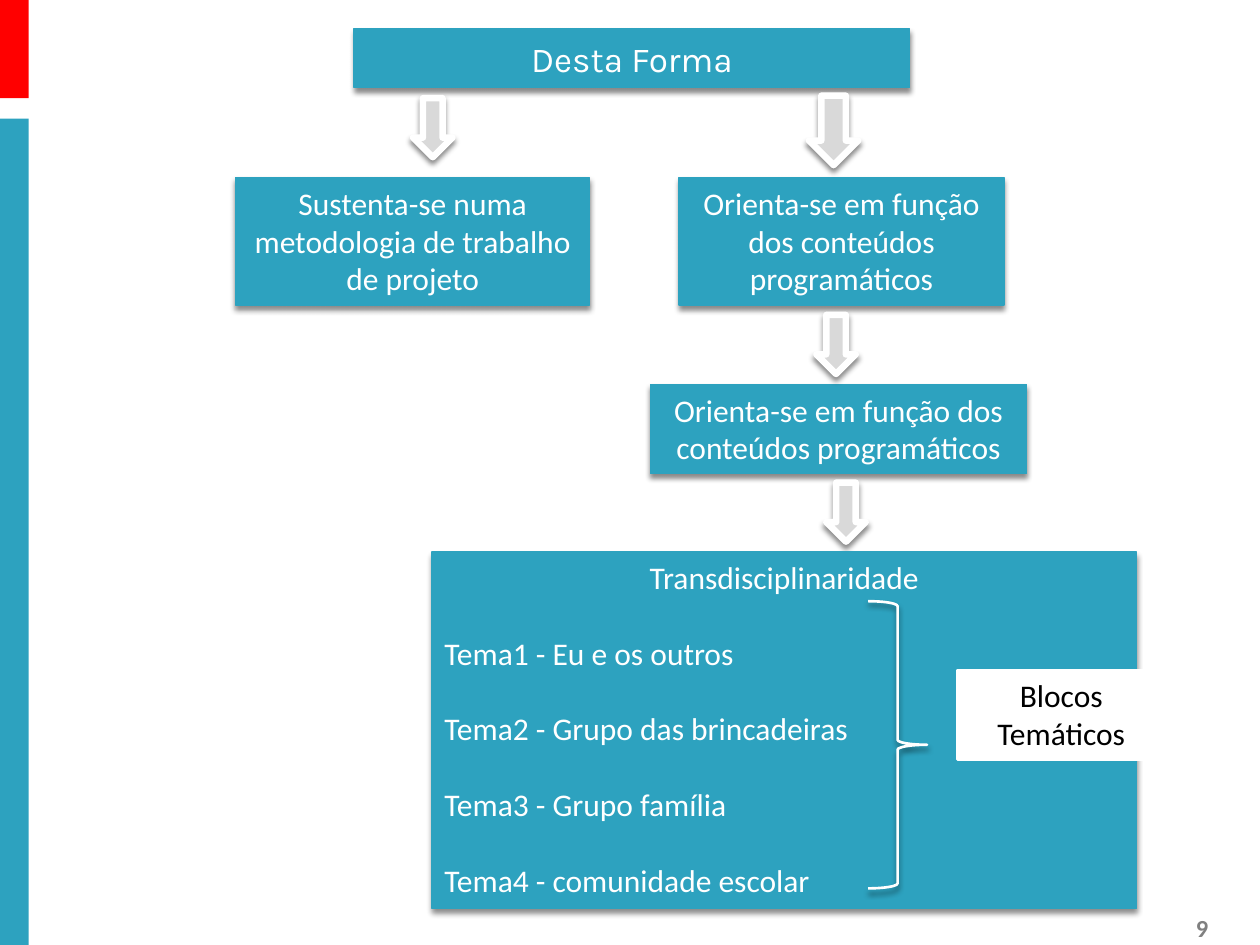
from dataclasses import dataclass

from lxml import etree
from pptx import Presentation
from pptx.dml.color import RGBColor
from pptx.enum import shapes, text
from pptx.oxml import ns
from pptx.util import Cm, Pt

SHAPE = shapes.MSO_SHAPE
ALIGN = text.PP_ALIGN
ANCHOR = text.MSO_ANCHOR


@dataclass(frozen=True)
class Theme:
    teal: str = "2DA2BF"
    red: str = "FF0000"
    white: str = "FFFFFF"
    black: str = "000000"
    arrow: str = "D9D9D9"
    page: str = "808080"
    body_font: str = "Calibri"
    title_font: str = "Karla"
    body: float = 18
    title: float = 20
    number: float = 14
    line_height: float = 21.6


THEME = Theme()


def add_shadow(shape):
    """Soft shadow falling straight down."""
    effects = shape._element.spPr.find(ns.qn("a:effectLst"))
    outer = etree.SubElement(effects, ns.qn("a:outerShdw"), blurRad=str(Pt(3)),
                             dist=str(Pt(2.4)), dir="5400000", rotWithShape="0")
    color = etree.SubElement(outer, ns.qn("a:srgbClr"), val=THEME.black)
    etree.SubElement(color, ns.qn("a:alpha"), val="45000")


def add_figure(slide, kind, box, fill=None, line=None, width=0.79, shadow=True):
    """Place a preset shape; box is left, top, width, height in cm."""
    figure = slide.shapes.add_shape(kind, *map(Cm, box))
    figure.shadow.inherit = False
    if fill:
        figure.fill.solid()
        figure.fill.fore_color.rgb = RGBColor.from_string(fill)
    else:
        figure.fill.background()
    if line:
        figure.line.color.rgb = RGBColor.from_string(line)
        figure.line.width = Pt(width)
    else:
        figure.line.fill.background()
    if shadow:
        add_shadow(figure)
    return figure


def write(holder, wording, color=THEME.white, size=THEME.body,
          font=THEME.body_font, anchor=ANCHOR.TOP, bold=False):
    frame = holder.text_frame
    frame.word_wrap = True
    frame.vertical_anchor = anchor
    frame.text = wording
    for paragraph in frame.paragraphs:
        paragraph.alignment = ALIGN.CENTER
        for run in paragraph.runs:
            run.font.name = font
            run.font.size = Pt(size)
            run.font.bold = bold
            run.font.color.rgb = RGBColor.from_string(color)
    return frame


def add_step(slide, box, wording, **style):
    step = add_figure(slide, SHAPE.RECTANGLE, box, THEME.teal, THEME.teal)
    write(step, wording, **style)


def add_arrow(slide, left, top, width=0.79, height=1.19):
    add_figure(slide, SHAPE.DOWN_ARROW, (left, top, width, height),
               THEME.arrow, THEME.white, 3.75)


def add_sidebar(slide, box):
    left, top, width, height = box
    red_height, teal_offset = 1.98, 2.39
    add_figure(slide, SHAPE.RECTANGLE,
               (left, top + teal_offset, width, height - teal_offset),
               THEME.teal, shadow=False)
    add_figure(slide, SHAPE.RECTANGLE, (left, top, width, red_height),
               THEME.red, shadow=False)


def add_flow(slide, box):
    """Heading, its two branches and the step below the right one."""
    left, top, width, height = box
    branch_top, branch_height, last_height = top + 3, 2.57, 1.8
    contents = "Orienta-se em função dos conteúdos programáticos"
    add_step(slide, (left + 8.36, top + height - last_height, 7.59, last_height),
             contents)
    add_step(slide, (left + 8.94, branch_top, 6.55, branch_height), contents)
    add_step(slide, (left + 2.39, top, 11.2, 1.19), "Desta Forma",
             size=THEME.title, font=THEME.title_font, anchor=ANCHOR.MIDDLE)
    add_step(slide, (left, branch_top, 7.14, branch_height),
             "Sustenta-se numa metodologia de trabalho de projeto")
    add_arrow(slide, left + 3.58, top + 1.4)
    add_arrow(slide, left + 11.56, top + 1.35, 0.99, 1.4)
    add_arrow(slide, left + 11.71, top + 5.77)
    add_arrow(slide, left + 11.91, top + height + 0.18)


def add_themes(slide, box):
    """Panel listing the themes, braced together under one label."""
    left, top, _, _ = box
    themes = ["Tema1 - Eu e os outros", "Tema2 - Grupo das brincadeiras",
              "Tema3 - Grupo família", "Tema4 - comunidade escolar"]
    panel = add_figure(slide, SHAPE.RECTANGLE, box, THEME.teal, THEME.teal)
    frame = write(panel, "\n".join(["Transdisciplinaridade", *themes]))
    for theme in frame.paragraphs[1:]:
        theme.alignment = ALIGN.LEFT
        theme.space_before = Pt(THEME.line_height)

    blocks = add_figure(slide, SHAPE.RECTANGLE, (left + 10.59, top + 2.38, 4.19, 1.8),
                        THEME.white, THEME.white, 1.5, shadow=False)
    write(blocks, "Blocos Temáticos", color=THEME.black)
    add_figure(slide, SHAPE.RIGHT_BRACE, (left + 8.79, top + 0.99, 1.19, 5.79),
               line=THEME.white, width=1.5)


def add_page_number(slide, box):
    number = slide.shapes.add_textbox(*map(Cm, box))
    write(number, "9", color=THEME.page, size=THEME.number,
          anchor=ANCHOR.MIDDLE, bold=True)


def main():
    deck = Presentation()
    deck.slide_width, deck.slide_height = Cm(25.4), Cm(19.05)
    slide = deck.slides.add_slide(deck.slide_layouts[6])
    add_flow(slide, (4.75, 0.58, 15.95, 8.97))
    add_sidebar(slide, (0, 0, 0.58, 19.05))
    add_themes(slide, (8.71, 11.13, 14.2, 7.19))
    add_page_number(slide, (23.5, 18.36, 1.47, 0.69))
    deck.save("out.pptx")


if __name__ == "__main__":
    main()
